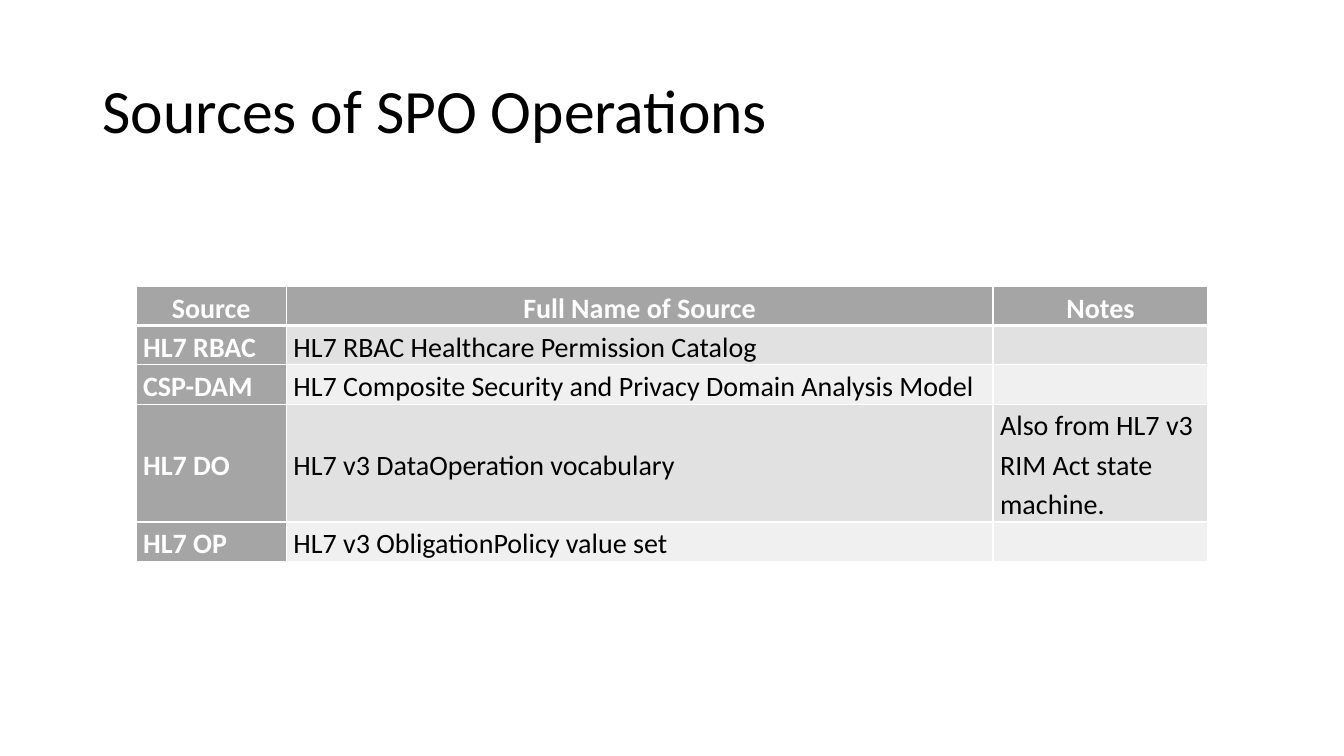
import pptx
import pptx.dml.color
import pptx.enum.text
import pptx.oxml.ns
import pptx.util
from lxml import etree

Inches = pptx.util.Inches
Pt = pptx.util.Pt
ALIGN = pptx.enum.text.PP_ALIGN
MIDDLE = pptx.enum.text.MSO_ANCHOR.MIDDLE

COLS = [1.49, 7.01, 2.13]
ROWS = [
    ("Source", "Full Name of Source", "Notes"),
    ("HL7 RBAC", "HL7 RBAC Healthcare Permission Catalog", ""),
    ("CSP-DAM", "HL7 Composite Security and Privacy Domain Analysis Model", ""),
    ("HL7 DO", "HL7 v3 DataOperation vocabulary", "Also from HL7 v3 RIM Act state machine."),
    ("HL7 OP", "HL7 v3 ObligationPolicy value set", ""),
]
HEIGHTS = [0.39, 0.39, 0.39, 1.17, 0.39]


def rgb(value):
    return pptx.dml.color.RGBColor.from_string(value)


class Deck:
    """Holds the style and the current slide, and draws its elements."""

    font = "Calibri"
    ink = "000000"
    paper = "FFFFFF"
    heading = "A5A5A5"
    bands = ("E1E1E1", "F0F0F0")

    def __init__(self, prs):
        self.s = prs.slides.add_slide(prs.slide_layouts[6])

    def text(self, p, text, size, color, spacing, align=ALIGN.LEFT, bold=False):
        p.alignment, p.line_spacing = align, spacing
        r = p.add_run()
        r.text = text
        for name, value in {"name": self.font, "size": Pt(size), "bold": bold}.items():
            setattr(r.font, name, value)
        r.font.color.rgb = rgb(color)

    def title(self, text, left, top, width, height):
        sp = self.s.shapes.add_textbox(*map(Inches, (left, top, width, height)))
        tf = sp.text_frame
        for name, value in {"word_wrap": True, "vertical_anchor": MIDDLE}.items():
            setattr(tf, name, value)
        self.text(tf.paragraphs[0], text, 44, self.ink, 0.9)

    def borders(self, cell, widths):
        tcPr = cell._tc.get_or_add_tcPr()
        qn = pptx.oxml.ns.qn
        for side, width in widths.items():
            ln = etree.SubElement(tcPr, qn(f"a:ln{side}"), w=str(Pt(width)))
            fill = etree.SubElement(ln, qn("a:solidFill"))
            etree.SubElement(fill, qn("a:srgbClr"), val=self.paper)

    def cell(self, cell, text, row, col):
        is_head = row == 0
        is_label = is_head or col == 0
        self.borders(cell, {"L": 1, "R": 1, "T": 3 if row == 1 else 1, "B": 3 if is_head else 1})
        cell.fill.solid()
        cell.fill.fore_color.rgb = rgb(self.heading if is_label else self.bands[(row - 1) % 2])
        fmt = {"margin_left": Inches(0.07), "margin_right": Inches(0.07),
               "margin_top": 0, "margin_bottom": 0, "vertical_anchor": MIDDLE}
        for name, value in fmt.items():
            setattr(cell, name, value)
        if text:
            self.text(cell.text_frame.paragraphs[0], text, 20,
                      self.paper if is_label else self.ink, 1.15,
                      ALIGN.CENTER if is_head else ALIGN.LEFT, is_label)

    def table(self, rows, left, top, widths, heights):
        size = map(Inches, (left, top, sum(widths), sum(heights)))
        tbl = self.s.shapes.add_table(len(rows), len(widths), *size).table
        tbl.first_col = True
        for column, width in zip(tbl.columns, widths):
            column.width = Inches(width)
        for i, (texts, height) in enumerate(zip(rows, heights)):
            tbl.rows[i].height = Inches(height)
            for j, text in enumerate(texts):
                self.cell(tbl.cell(i, j), text, i, j)


def main():
    prs = pptx.Presentation()
    prs.slide_width, prs.slide_height = Inches(13.33), Inches(7.5)
    deck = Deck(prs)
    deck.title("Sources of SPO Operations", 0.92, 0.4, 11.5, 1.45)
    deck.table(ROWS, 1.35, 2.84, COLS, HEIGHTS)
    prs.save("out.pptx")


if __name__ == "__main__":
    main()
